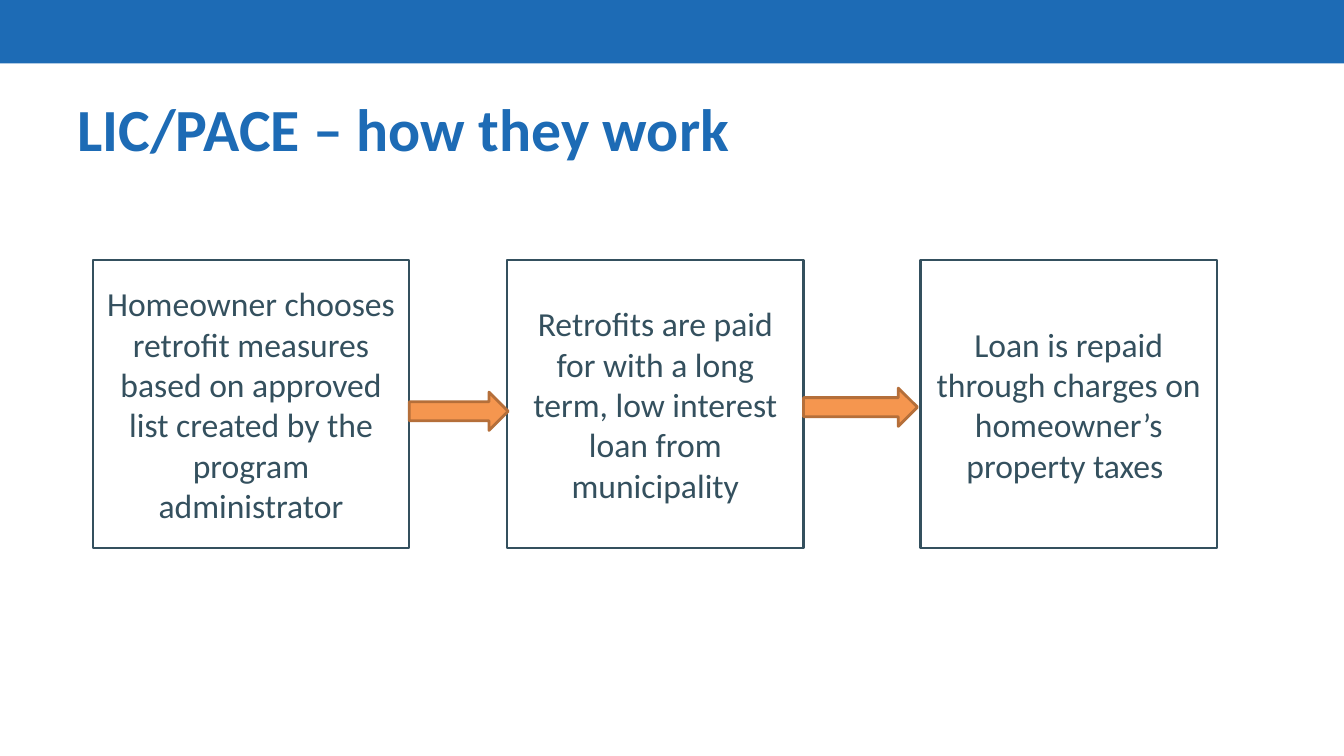
from dataclasses import dataclass

import pptx
import pptx.dml.color
import pptx.enum.shapes
import pptx.enum.text
import pptx.shapes.autoshape
import pptx.slide
import pptx.text.text
import pptx.util

RGBColor = pptx.dml.color.RGBColor
Inches = pptx.util.Inches
Pt = pptx.util.Pt
Shape = pptx.enum.shapes.MSO_SHAPE
Align = pptx.enum.text.PP_ALIGN
Anchor = pptx.enum.text.MSO_ANCHOR

BLUE = RGBColor(0x1D, 0x6B, 0xB5)
SLATE = RGBColor(0x34, 0x50, 0x5E)
WHITE = RGBColor(0xFF, 0xFF, 0xFF)
ORANGE = RGBColor(0xF5, 0x96, 0x4F)
BROWN = RGBColor(0xB5, 0x6F, 0x3A)

FONT = "Calibri"
WIDTH = 13.33
STEP_TOP, STEP_HIGH = 2.58, 2.86
ARROW_HIGH = 0.38


@dataclass
class Step:
    left: float
    width: float
    text: str


@dataclass
class Arrow:
    left: float
    top: float
    width: float


STEPS = [
    Step(0.92, 3.14, "Homeowner chooses retrofit measures based on approved "
                     "list created by the program administrator"),
    Step(5.03, 2.94, "Retrofits are paid for with a long term, low interest "
                     "loan from municipality"),
    Step(9.13, 2.94, "Loan is repaid through charges on homeowner’s property taxes "),
]
ARROWS = [Arrow(4.06, 3.89, 0.98), Arrow(7.97, 3.85, 1.13)]


def add_block(slide: pptx.slide.Slide, kind: Shape, left: float, top: float,
              width: float, height: float, fill: RGBColor,
              line: RGBColor | None = None,
              weight: float = 0) -> pptx.shapes.autoshape.Shape:
    block = slide.shapes.add_shape(
        kind, Inches(left), Inches(top), Inches(width), Inches(height))
    block.shadow.inherit = False
    block.fill.solid()
    block.fill.fore_color.rgb = fill
    if line is None:
        block.line.fill.background()
    else:
        block.line.color.rgb = line
        block.line.width = Pt(weight)
    return block


def set_text(frame: pptx.text.text.TextFrame, text: str, size: float,
             color: RGBColor, align: Align, bold: bool = False) -> None:
    frame.text = text
    frame.word_wrap = True
    frame.vertical_anchor = Anchor.MIDDLE
    line = frame.paragraphs[0]
    line.alignment = align
    font = line.runs[0].font
    font.name = FONT
    font.size = Pt(size)
    font.bold = bold
    font.color.rgb = color


def main() -> None:
    deck = pptx.Presentation()
    deck.slide_width, deck.slide_height = Inches(WIDTH), Inches(7.5)
    slide = deck.slides.add_slide(deck.slide_layouts[6])

    # Top band and title
    add_block(slide, Shape.RECTANGLE, 0, -0.02, WIDTH, 0.65, BLUE)
    title = slide.shapes.add_textbox(
        Inches(0.67), Inches(0.64), Inches(12), Inches(1.25))
    set_text(title.text_frame, "LIC/PACE – how they work", 42.7, BLUE,
             Align.LEFT, bold=True)

    # Process steps
    for step in STEPS:
        box = add_block(slide, Shape.RECTANGLE, step.left, STEP_TOP,
                        step.width, STEP_HIGH, WHITE, SLATE, 1.5)
        set_text(box.text_frame, step.text, 24, SLATE, Align.CENTER)

    # Arrows between steps
    for arrow in ARROWS:
        add_block(slide, Shape.RIGHT_ARROW, arrow.left, arrow.top,
                  arrow.width, ARROW_HIGH, ORANGE, BROWN, 2)

    deck.save("out.pptx")


if __name__ == "__main__":
    main()
